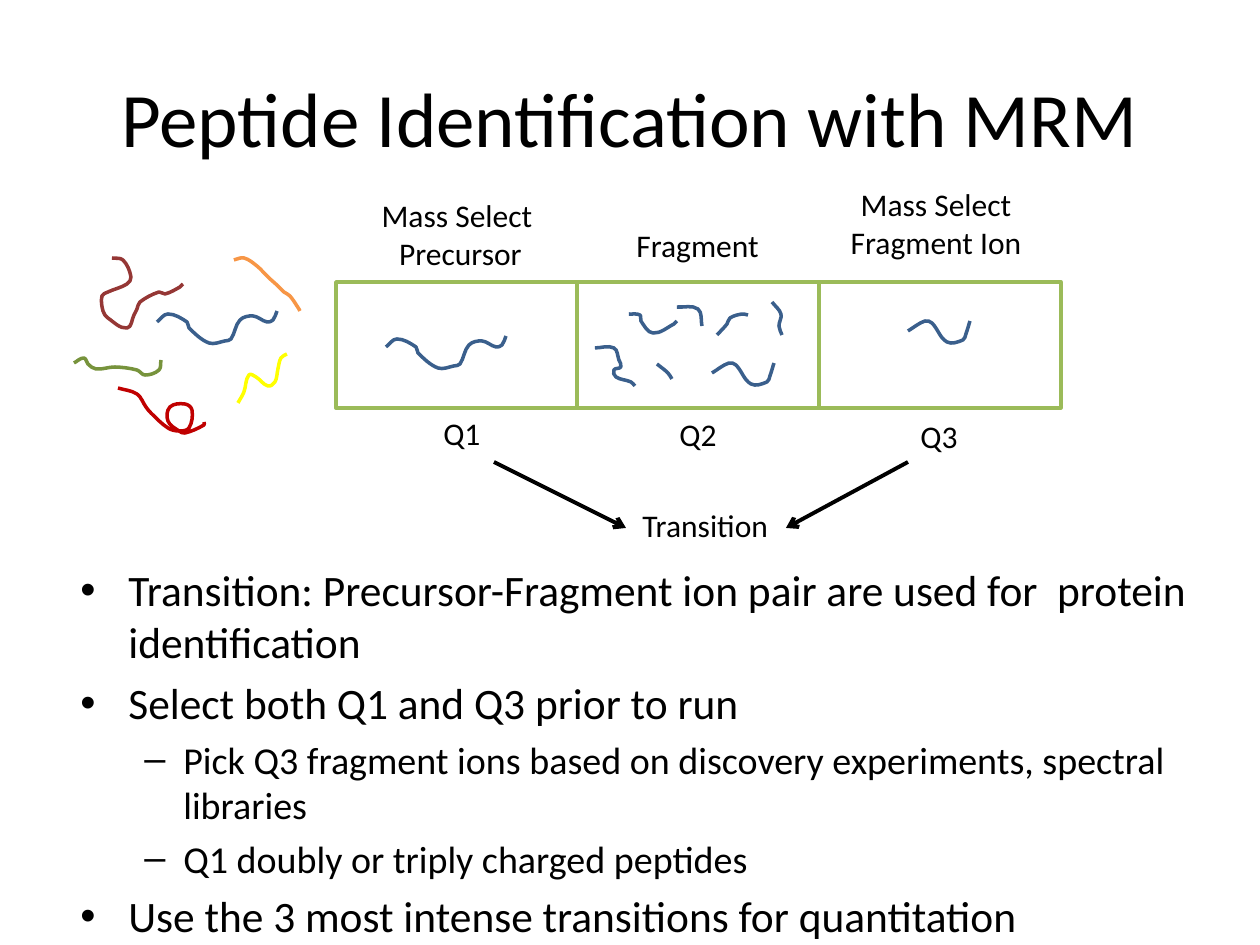
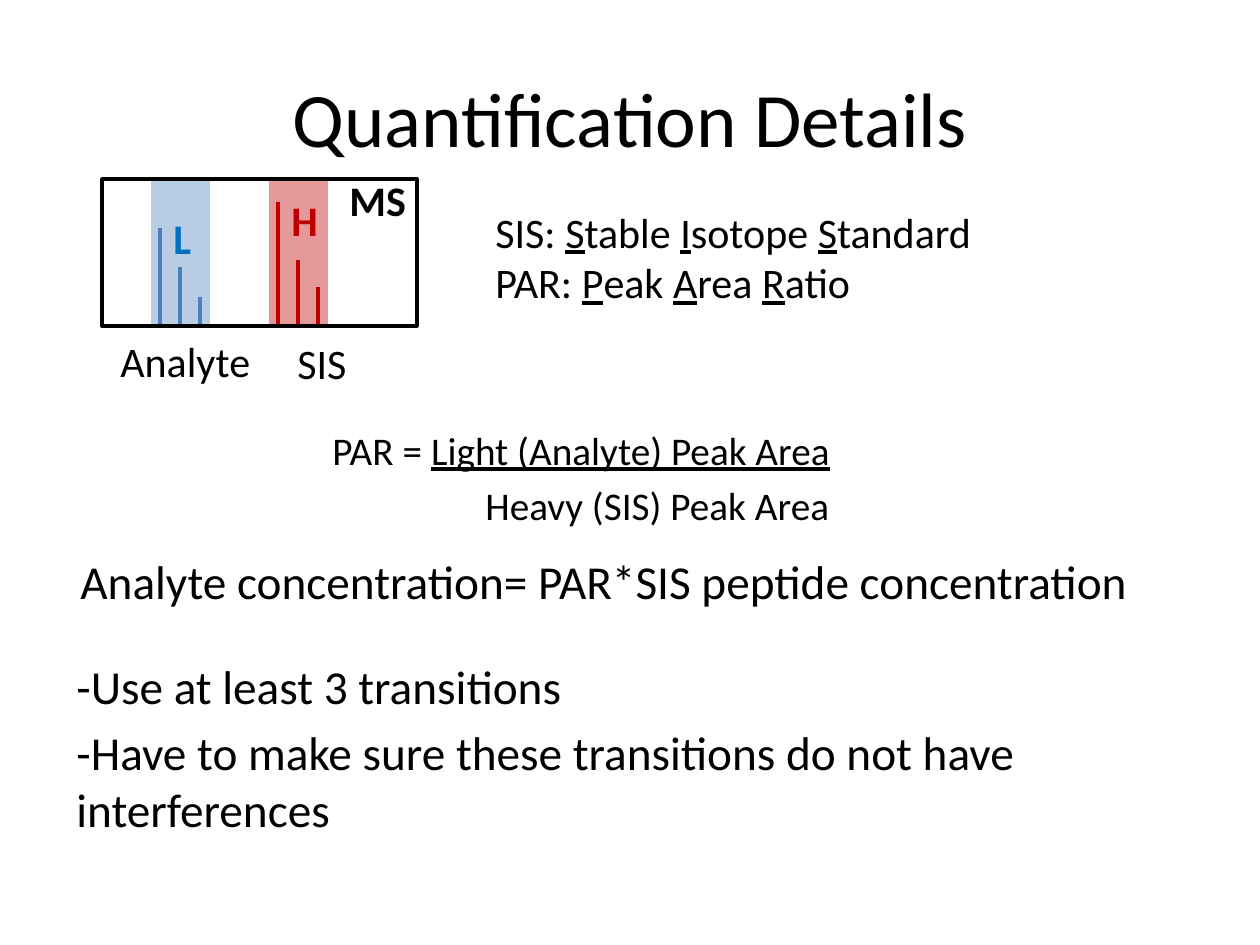
from math import hypot

from lxml import etree
from pptx import Presentation
from pptx.dml.color import RGBColor
from pptx.enum.shapes import MSO_CONNECTOR, MSO_SHAPE
from pptx.enum.text import MSO_ANCHOR, PP_ALIGN
from pptx.oxml.ns import qn
from pptx.util import Pt

PX = 914400 / 126
FONT = "Calibri"
LEFT, CENTER = PP_ALIGN.LEFT, PP_ALIGN.CENTER
TOP, MIDDLE = MSO_ANCHOR.TOP, MSO_ANCHOR.MIDDLE
RECTANGLE, STRAIGHT = MSO_SHAPE.RECTANGLE, MSO_CONNECTOR.STRAIGHT

COLORS = {
    "black": "000000", "white": "FFFFFF", "box": "9BBB59", "peptide": "3A5F8C",
    "red": "C00000", "maroon": "953735", "orange": "F79646", "yellow": "FFFF00",
    "green": "77933C", "light band": "4F81BD", "light peak": "4B7EBC",
    "light label": "0070C0",
}

TITLES = ["Peptide Identification with MRM", "Quantification Details"]

MRM_BULLETS = [
    (0, "Transition: Precursor-Fragment ion pair are used for  protein identification"),
    (0, "Select both Q1 and Q3 prior to run"),
    (1, "Pick Q3 fragment ions based on discovery experiments, spectral libraries"),
    (1, "Q1 doubly or triply charged peptides"),
    (0, "Use the 3 most intense transitions for quantitation"),
]
BULLET_LEVELS = [
    {"size": 24.8, "before": 5, "margin": 48, "hanging": 48, "bullet": "•"},
    {"size": 21.7, "before": 4.5, "margin": 103, "hanging": 39, "bullet": "–"},
]

QUADRUPOLE_LABELS = [
    (["Q1"], (431, 408, 63, 50), LEFT),
    (["Q2"], (667, 409, 63, 50), LEFT),
    (["Q3"], (908, 411, 63, 50), LEFT),
    (["Mass Select ", "Precursor"], (368, 190, 185, 89), CENTER),
    (["Fragment"], (624, 220, 149, 50), LEFT),
    (["Mass Select ", "Fragment Ion "], (837, 179, 205, 89), CENTER),
    (["Transition"], (630, 500, 152, 50), LEFT),
]
TRANSITION_ARROWS = [((494, 462), (626, 528)), ((908, 462), (786, 528))]

PRECURSOR = [(0, 11), (11, 3), (30, 11), (32, 17), (52, 32), (68, 30), (74, 28),
             (83, 9), (96, 5), (110, 11), (116, 9), (120, 0)]
FRAGMENT_ION = [(0, 10), (17, 0), (24, 2), (39, 21), (55, 19), (58, 13), (62, 0)]
STRANDS = [
    ("peptide", (0, 0), [(629, 314), (640, 315), (641, 321), (653, 333),
                         (674, 324), (677, 321)]),
    ("peptide", (0, 0), [(657, 364), (668, 373), (672, 379)]),
    ("peptide", (0, 0), [(717, 335), (727, 324), (730, 318), (742, 314), (748, 315)]),
    ("peptide", (712, 363), FRAGMENT_ION),
    ("peptide", (0, 0), [(595, 348), (614, 348), (619, 360), (621, 367), (614, 370),
                         (616, 377), (631, 382), (635, 386)]),
    ("peptide", (0, 0), [(680, 305), (680, 305)]),
    ("peptide", (0, 0), [(677, 307), (698, 309), (702, 326)]),
    ("peptide", (0, 0), [(772, 302), (781, 314), (779, 326), (782, 335)]),
    ("peptide", (908, 321), FRAGMENT_ION),
    ("peptide", (386, 336), PRECURSOR),
    ("peptide", (157, 311), PRECURSOR),
    ("red", (0, 0), [(118, 388), (137, 394), (146, 407), (151, 413), (168, 428),
                     (179, 431), (189, 428), (192, 410), (185, 404), (170, 407),
                     (168, 421), (179, 431), (185, 433), (204, 425), (204, 422)]),
    ("maroon", (0, 0), [(112, 258), (123, 260), (131, 277), (127, 284), (108, 292),
                        (102, 296), (103, 311), (108, 318), (127, 328), (134, 315),
                        (137, 309), (140, 302), (159, 292), (165, 294), (180, 287),
                        (183, 284)]),
    ("orange", (0, 0), [(234, 260), (244, 258), (257, 266), (268, 277), (278, 286),
                        (284, 292), (290, 296), (299, 309), (300, 311)]),
    ("yellow", (0, 0), [(238, 403), (244, 392), (249, 375), (256, 377), (268, 386),
                        (275, 382), (278, 369), (281, 358), (287, 354)]),
    ("green", (0, 0), [(74, 363), (84, 358), (88, 364), (96, 369), (115, 367),
                       (137, 370), (145, 375), (159, 370), (161, 360)]),
]

SPECTRUM = (102, 179, 315, 147)
BAND_WIDTH, PEAK_GAP = 59, 20
PEAK_GROUPS = [
    {"band": 269, "fill": "red", "peak": "red", "first": 278, "tops": [202, 260, 287],
     "label": "H", "label box": (279, 188, 52, 63), "label color": "red"},
    {"band": 151, "fill": "light band", "peak": "light peak", "first": 160,
     "tops": [228, 267, 297], "label": "L", "label box": (161, 206, 43, 63),
     "label color": "light label"},
]
SPECTRUM_LABELS = [
    (["MS"], (337, 168, 83, 63), True),
    (["Analyte"], (108, 329, 156, 63), False),
    (["SIS"], (285, 331, 74, 63), False),
    (["SIS: _S_table _I_sotope _S_tandard", "PAR: _P_eak _A_rea _R_atio"],
     (483, 200, 505, 115), False),
]
PAR_NUMERATOR = "PAR = _Light (Analyte) Peak Area_"
PAR_DENOMINATOR = "Heavy (SIS) Peak Area"
TRANSITION_NOTES = [
    "-Use at least 3 transitions",
    "-Have to make sure these transitions do not have interferences",
]
CONCENTRATION = "Analyte concentration= PAR*SIS peptide concentration"


def emu(*lengths):
    return [round(length * PX) for length in lengths]


def rgb(name):
    return RGBColor.from_string(COLORS[name])


def write_paragraph(paragraph, text, size=18, color="black", bold=False, align=LEFT,
                    before=0, margin=0, hanging=0, bullet=None):
    paragraph.alignment = align
    paragraph.space_before = Pt(before)
    for index, part in enumerate(text.split("_")):
        if part:
            run = paragraph.add_run()
            run.text = part
            run.font.name, run.font.size, run.font.bold = FONT, Pt(size), bold
            run.font.underline = index % 2 == 1
            run.font.color.rgb = rgb(color)
    properties = paragraph._p.get_or_add_pPr()
    properties.set("marL", str(round(margin * PX)))
    properties.set("indent", str(round(-hanging * PX)))
    if bullet:
        etree.SubElement(properties, qn("a:buFont")).set("typeface", "Arial")
        etree.SubElement(properties, qn("a:buChar")).set("char", bullet)


def add_text(slide, box, texts, wrap=False, anchor=TOP, **style):
    frame = slide.shapes.add_textbox(*emu(*box)).text_frame
    frame.word_wrap = wrap
    frame.vertical_anchor = anchor
    for index, item in enumerate(texts):
        text, own_style = item if isinstance(item, tuple) else (item, {})
        paragraph = frame.add_paragraph() if index else frame.paragraphs[0]
        write_paragraph(paragraph, text, **{**style, **own_style})


def add_rectangle(slide, box, fill=None, line=None, alpha=None):
    shape = slide.shapes.add_shape(RECTANGLE, *emu(*box))
    shape.shadow.inherit = False
    if fill:
        shape.fill.solid()
        shape.fill.fore_color.rgb = rgb(fill)
    else:
        shape.fill.background()
    if alpha:
        color = shape._element.spPr.find(".//" + qn("a:srgbClr"))
        etree.SubElement(color, qn("a:alpha")).set("val", str(alpha * 1000))
    if line:
        shape.line.color.rgb = rgb(line)
        shape.line.width = Pt(2)
    else:
        shape.line.fill.background()


def add_line(slide, start, end, color, width=2, arrow=False):
    connector = slide.shapes.add_connector(STRAIGHT, *emu(*start, *end))
    connector.line.color.rgb = rgb(color)
    connector.line.width = Pt(width)
    if arrow:
        line = connector.line._get_or_add_ln()
        etree.SubElement(line, qn("a:tailEnd")).set("type", "arrow")
    etree.SubElement(connector._element.spPr, qn("a:effectLst"))


def curve_handles(points):
    padded = [points[0], *points, points[-1]]
    tangents = []
    for (x1, y1), (x2, y2) in zip(padded, padded[2:]):
        length = hypot(x2 - x1, y2 - y1) or 1
        tangents.append(((x2 - x1) / length, (y2 - y1) / length))
    handles = []
    for index, ((x1, y1), (x2, y2)) in enumerate(zip(points, points[1:])):
        reach = hypot(x2 - x1, y2 - y1) / 3
        (dx1, dy1), (dx2, dy2) = tangents[index:index + 2]
        handles.append([(x1 + dx1 * reach, y1 + dy1 * reach),
                        (x2 - dx2 * reach, y2 - dy2 * reach)])
    return handles


def add_strand(slide, color, origin, offsets):
    points = [emu(origin[0] + x, origin[1] + y) for x, y in offsets]
    builder = slide.shapes.build_freeform(*points[0])
    builder.add_line_segments(points[1:], close=False)
    shape = builder.convert_to_shape()
    segments = list(shape._element.iter(qn("a:lnTo")))
    for segment, handles in zip(segments, curve_handles(points)):
        segment.tag = qn("a:cubicBezTo")
        for position, (x, y) in enumerate(handles):
            handle = etree.Element(qn("a:pt"), x=str(round(x - shape.left)),
                                   y=str(round(y - shape.top)))
            segment.insert(position, handle)
    shape.shadow.inherit = False
    shape.fill.background()
    shape.line.color.rgb = rgb(color)
    shape.line.width = Pt(2)


def add_titled_slide(presentation, title):
    slide = presentation.slides.add_slide(presentation.slide_layouts[6])
    add_text(slide, (63, 38, 1134, 157), [title], wrap=True, anchor=MIDDLE,
             size=44, align=CENTER)
    return slide


def build_identification(slide):
    bullets = [(text, BULLET_LEVELS[level]) for level, text in MRM_BULLETS]
    add_text(slide, (68, 557, 1134, 350), bullets, wrap=True)
    for index in range(3):
        add_rectangle(slide, (336 + 483 * index // 2, 282, 242, 126), "white", "box")
    for texts, box, align in QUADRUPOLE_LABELS:
        add_text(slide, box, texts, align=align)
    for strand in STRANDS:
        add_strand(slide, *strand)
    for start, end in TRANSITION_ARROWS:
        add_line(slide, start, end, "black", width=2.25, arrow=True)


def build_quantification(slide):
    left, top, width, height = SPECTRUM
    add_text(slide, (320, 420, 530, 116),
             [PAR_NUMERATOR, (PAR_DENOMINATOR, {"margin": 153})],
             wrap=True, size=22.4, before=4.5)
    for group in PEAK_GROUPS:
        add_rectangle(slide, (group["band"], top, BAND_WIDTH, height),
                      group["fill"], alpha=40)
        for index, peak_top in enumerate(group["tops"]):
            x = group["first"] + PEAK_GAP * index
            add_line(slide, (x, peak_top), (x, top + height), group["peak"])
        add_text(slide, group["label box"], [group["label"]], size=24, bold=True,
                 color=group["label color"])
    add_rectangle(slide, SPECTRUM, line="black")
    for texts, box, bold in SPECTRUM_LABELS:
        add_text(slide, box, texts, size=24, bold=bold)
    add_text(slide, (64, 651, 1134, 232), TRANSITION_NOTES, wrap=True, size=27, before=5.4)
    add_text(slide, (68, 546, 1223, 116), [CONCENTRATION], wrap=True, size=27, before=5.4)


def main():
    presentation = Presentation()
    presentation.slide_width, presentation.slide_height = emu(1260, 945)
    for title, build in zip(TITLES, [build_identification, build_quantification]):
        build(add_titled_slide(presentation, title))
    presentation.save("out.pptx")


if __name__ == "__main__":
    main()
